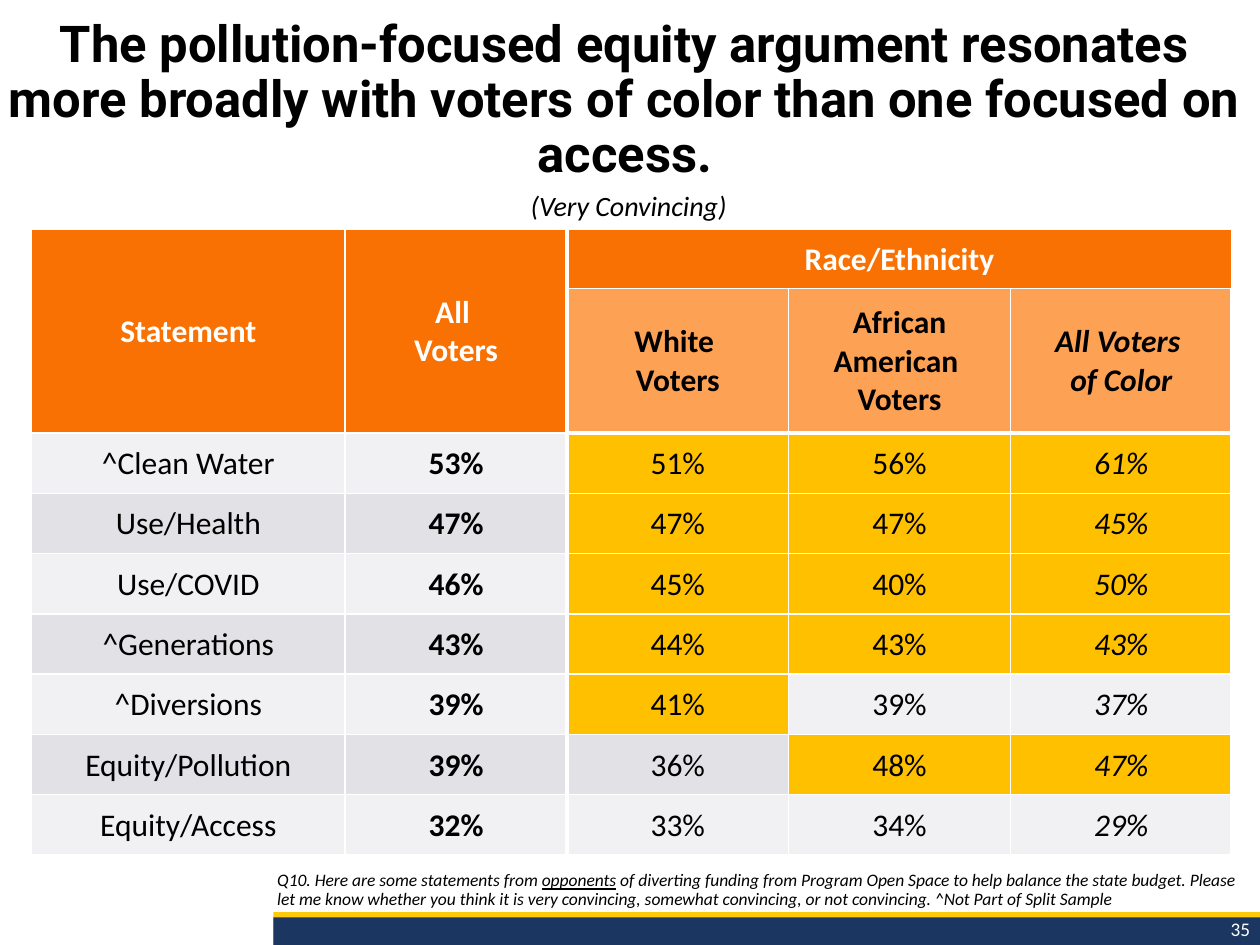
import dataclasses
import typing

import lxml.etree
import pptx
import pptx.dml.color
import pptx.enum.shapes
import pptx.enum.text
import pptx.oxml.ns
import pptx.util

RGBColor = pptx.dml.color.RGBColor
WHITE = RGBColor(0xFF, 0xFF, 0xFF)
BLACK = RGBColor(0x00, 0x00, 0x00)
NAVY = RGBColor(0x1B, 0x36, 0x61)
YELLOW = RGBColor(0xFC, 0xCA, 0x09)
ORANGE = RGBColor(0xF9, 0x71, 0x03)
PEACH = RGBColor(0xFD, 0xA1, 0x55)
GOLD = RGBColor(0xFF, 0xC0, 0x00)
BANDS = (RGBColor(0xF1, 0xF1, 0xF3), RGBColor(0xE2, 0xE2, 0xE6))

CENTER = pptx.enum.text.PP_ALIGN.CENTER
LEFT = pptx.enum.text.PP_ALIGN.LEFT
RIGHT = pptx.enum.text.PP_ALIGN.RIGHT
TOP = pptx.enum.text.MSO_ANCHOR.TOP
MIDDLE = pptx.enum.text.MSO_ANCHOR.MIDDLE
BOTTOM = pptx.enum.text.MSO_ANCHOR.BOTTOM

SLIDE_W, SLIDE_H = pptx.util.Inches(10), pptx.util.Inches(7.5)
COLUMN_SHARES = [24.9] + [17.6] * 4
ROW_SHARES = [6.24, 15.33] + [6.38] * 7
HEADER_ROWS = 2


@dataclasses.dataclass
class Box:
    """Position and size as percentages of the slide."""
    left: float
    top: float
    width: float
    height: float

    def emu(self) -> tuple[int, int, int, int]:
        return (across(self.left), down(self.top),
                across(self.width), down(self.height))


@dataclasses.dataclass
class Header:
    text: str
    row: int
    col: int
    row_span: int = 1
    col_span: int = 1
    fill: RGBColor = ORANGE
    color: RGBColor = WHITE
    italic: bool = False


@dataclasses.dataclass
class Statement:
    name: str
    shares: tuple[int, int, int, int]
    highlighted: tuple[int, ...] = (2, 3, 4)


HEADERS = [
    Header("Statement", 0, 0, row_span=2),
    Header("All \vVoters", 0, 1, row_span=2),
    Header("Race/Ethnicity", 0, 2, col_span=3),
    Header("White \vVoters", 1, 2, fill=PEACH, color=BLACK),
    Header("African American \vVoters", 1, 3, fill=PEACH, color=BLACK),
    Header("All Voters \nof Color", 1, 4, fill=PEACH, color=BLACK, italic=True),
]
STATEMENTS = [
    Statement("^Clean Water", (53, 51, 56, 61)),
    Statement("Use/Health", (47, 47, 47, 45)),
    Statement("Use/COVID", (46, 45, 40, 50)),
    Statement("^Generations", (43, 44, 43, 43)),
    Statement("^Diversions", (39, 41, 39, 37), (2,)),
    Statement("Equity/Pollution", (39, 36, 48, 47), (3, 4)),
    Statement("Equity/Access", (32, 33, 34, 29), ()),
]
QUESTION = [
    ("Q10. Here are some statements from ", False),
    ("opponents", True),
    (" of diverting funding from Program Open Space to help balance the state "
     "budget. Please let me know whether you think it is very convincing, "
     "somewhat convincing, or not convincing. ^Not Part of Split Sample", False),
]


def across(percent: float) -> int:
    return round(SLIDE_W * percent / 100)


def down(percent: float) -> int:
    return round(SLIDE_H * percent / 100)


def set_all(obj: typing.Any, values: dict[str, typing.Any]) -> None:
    for name, value in values.items():
        setattr(obj, name, value)


def format_text(tf: typing.Any, size: float, color: RGBColor, align: typing.Any,
                name: str = "Calibri", **font: typing.Any) -> None:
    values = {"size": pptx.util.Pt(size), "name": name, **font}
    for p in tf.paragraphs:
        p.alignment = align
        for r in p.runs:
            set_all(r.font, values)
            r.font.color.rgb = color


def place(sp: typing.Any, box: Box) -> None:
    set_all(sp, dict(zip(("left", "top", "width", "height"), box.emu())))


def add_bar(s: typing.Any, box: Box, color: RGBColor) -> None:
    sp = s.shapes.add_shape(pptx.enum.shapes.MSO_SHAPE.RECTANGLE, *box.emu())
    sp.shadow.inherit = False
    sp.fill.solid()
    sp.fill.fore_color.rgb = color
    sp.line.fill.background()


def add_label(s: typing.Any, box: Box, text: str, size: float, color: RGBColor,
              align: typing.Any, **font: typing.Any) -> None:
    tf = s.shapes.add_textbox(*box.emu()).text_frame
    tf.word_wrap = True
    tf.text = text
    format_text(tf, size, color, align, **font)


def set_borders(cell: typing.Any, row: int, col: int) -> None:
    thick = {
        "lnL": col == 2,
        "lnR": col in (1, 4),
        "lnT": row == HEADER_ROWS and col >= 2,
        "lnB": row == HEADER_ROWS - 1,
    }
    tc_pr = cell._tc.get_or_add_tcPr()
    qn = pptx.oxml.ns.qn
    for tag, is_thick in thick.items():
        width = pptx.util.Pt(3 if is_thick else 1)
        ln = lxml.etree.SubElement(tc_pr, qn(f"a:{tag}"), w=str(int(width)))
        fill = lxml.etree.SubElement(ln, qn("a:solidFill"))
        lxml.etree.SubElement(fill, qn("a:srgbClr"), val=str(WHITE))


def fill_cell(cell: typing.Any, text: str, fill: RGBColor,
              color: RGBColor = BLACK, **font: typing.Any) -> None:
    margin = pptx.util.Inches(0.01)
    set_all(cell, {"margin_left": margin, "margin_right": margin,
                   "margin_top": margin, "margin_bottom": 0,
                   "vertical_anchor": MIDDLE})
    cell.fill.solid()
    cell.fill.fore_color.rgb = fill
    cell.text_frame.text = text
    format_text(cell.text_frame, 18, color, CENTER, **font)


def add_results(s: typing.Any) -> None:
    box = Box(2.5, 24.27, sum(COLUMN_SHARES), sum(ROW_SHARES))
    table = s.shapes.add_table(len(ROW_SHARES), len(COLUMN_SHARES), *box.emu()).table
    set_all(table, {"first_row": False, "horz_banding": False})
    for column, share in zip(table.columns, COLUMN_SHARES):
        column.width = across(share)
    for i, share in enumerate(ROW_SHARES):
        table.rows[i].height = down(share)
        for j in range(len(COLUMN_SHARES)):
            set_borders(table.cell(i, j), i, j)
    for h in HEADERS:
        cell = table.cell(h.row, h.col)
        if h.row_span > 1 or h.col_span > 1:
            cell.merge(table.cell(h.row + h.row_span - 1, h.col + h.col_span - 1))
        fill_cell(cell, h.text, h.fill, h.color, bold=True, italic=h.italic)
    for i, st in enumerate(STATEMENTS):
        for j, text in enumerate([st.name] + [f"{n}%" for n in st.shares]):
            fill = GOLD if j in st.highlighted else BANDS[i % 2]
            fill_cell(table.cell(i + HEADER_ROWS, j), text, fill,
                      bold=j == 1, italic=j == 4)


def prepare_placeholder(s: typing.Any, sp: typing.Any, box: Box, anchor: typing.Any) -> typing.Any:
    place(sp, box)
    s.shapes._spTree.append(sp._element)
    tf = sp.text_frame
    set_all(tf, {"word_wrap": True, "vertical_anchor": anchor,
                 "auto_size": pptx.enum.text.MSO_AUTO_SIZE.NONE})
    set_all(tf.paragraphs[0], {"line_spacing": 0.9, "space_before": pptx.util.Pt(0)})
    return tf


def main() -> None:
    prs = pptx.Presentation()
    set_all(prs, {"slide_width": SLIDE_W, "slide_height": SLIDE_H})
    s = prs.slides.add_slide(prs.slide_layouts[1])
    title, body = s.shapes.title, s.placeholders[1]

    add_bar(s, Box(21.7, 96.53, 78.3, 3.6), YELLOW)
    add_bar(s, Box(21.7, 97.07, 78.3, 3.2), NAVY)
    add_label(s, Box(85.4, 96.4, 14.8, 3.87), "35", 11, WHITE, RIGHT)
    add_results(s)

    tf = prepare_placeholder(s, body, Box(21, 89.73, 78.6, 7.2), BOTTOM)
    p = tf.paragraphs[0]
    p_pr = p._p.get_or_add_pPr()
    set_all(p, {"level": 0})
    lxml.etree.SubElement(p_pr, pptx.oxml.ns.qn("a:buNone"))
    for name in ("marL", "indent"):
        p_pr.set(name, "0")
    for text, _ in QUESTION:
        p.add_run().text = text
    format_text(tf, 10, BLACK, LEFT, italic=True)
    for r, (_, underlined) in zip(p.runs, QUESTION):
        r.font.underline = underlined

    add_label(s, Box(0, 19.33, 99.8, 4.93), "(Very Convincing)", 16, BLACK, CENTER, italic=True)

    tf = prepare_placeholder(s, title, Box(-0.4, 1.33, 100, 21.2), TOP)
    tf.paragraphs[0].add_run().text = (
        "The pollution-focused equity argument resonates more broadly "
        "with voters of color than one focused on access.")
    format_text(tf, 29, BLACK, CENTER, name="Roboto", bold=True)
    prs.save("out.pptx")


if __name__ == "__main__":
    main()
